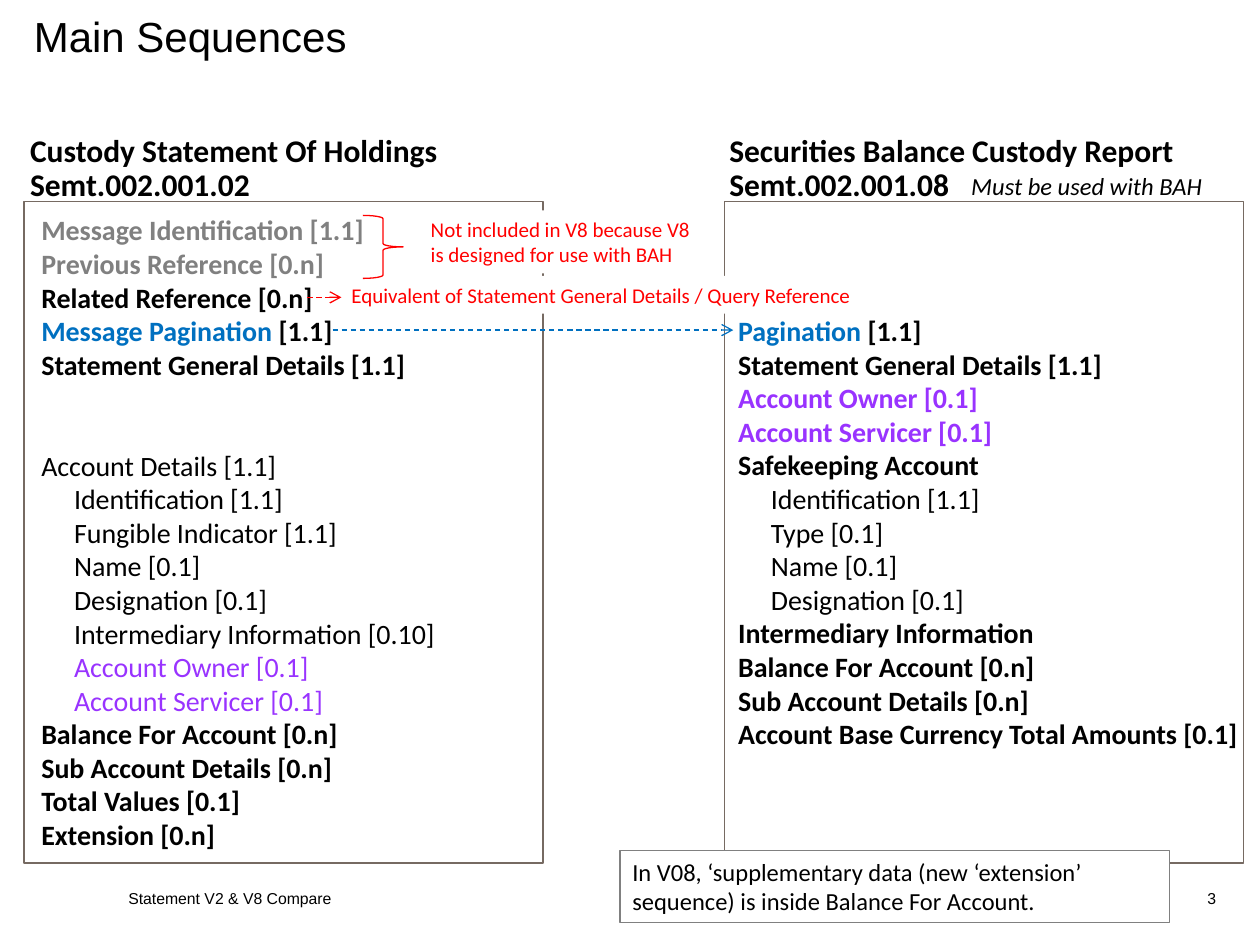
from dataclasses import dataclass

from pptx import Presentation
from pptx.dml.color import RGBColor
from pptx.enum.dml import MSO_LINE
from pptx.enum.shapes import MSO_CONNECTOR, MSO_SHAPE
from pptx.enum.text import MSO_ANCHOR, MSO_AUTO_SIZE, PP_ALIGN
from pptx.oxml.ns import qn
from pptx.util import Inches, Pt
from lxml import etree

RECT, BRACE = MSO_SHAPE.RECTANGLE, MSO_SHAPE.RIGHT_BRACE
STRAIGHT, DASH = MSO_CONNECTOR.STRAIGHT, MSO_LINE.DASH
TOP, MIDDLE = MSO_ANCHOR.TOP, MSO_ANCHOR.MIDDLE
LEFT, RIGHT = PP_ALIGN.LEFT, PP_ALIGN.RIGHT
FIT, FIXED = MSO_AUTO_SIZE.SHAPE_TO_FIT_TEXT, MSO_AUTO_SIZE.NONE


@dataclass(frozen=True)
class Theme:
    black: str = "000000"
    white: str = "FFFFFF"
    gray: str = "808080"
    frame: str = "766A62"
    blue: str = "0070C0"
    purple: str = "9933FF"
    red: str = "FF0000"
    head_font: str = "Arial"
    body_font: str = "Calibri"
    title: int = 24
    heading: int = 18
    item: int = 16
    remark: int = 14
    note: int = 12
    footer: int = 9
    line: float = 0.75


T = Theme()
prs = Presentation()
prs.slide_width, prs.slide_height = Inches(10), Inches(7.5)
COL, ROW = prs.slide_width / 100, prs.slide_height / 75
s = prs.slides.add_slide(prs.slide_layouts[6])


def grid(*cells):
    return [round(c * (ROW if i % 2 else COL)) for i, c in enumerate(cells)]


def write(sp, lines, size, font=T.body_font, color=T.black, bold=False, italic=False,
          align=LEFT, anchor=TOP, wrap=True, fit=FIT, spacing=None):
    tf = sp.text_frame
    tf.word_wrap, tf.auto_size, tf.vertical_anchor = wrap, fit, anchor
    for i, line in enumerate(lines):
        p = tf.paragraphs[0] if i == 0 else tf.add_paragraph()
        line = {"runs": [(line, color)]} if isinstance(line, str) else line
        p.alignment = align
        if spacing:
            p.line_spacing = Pt(spacing)
        if "before" in line:
            p.space_before = Pt(line["before"])
        if line.get("indent"):
            p._p.get_or_add_pPr().set("marL", str(round(INDENT * COL)))
        for text, tint in line["runs"]:
            r = p.add_run()
            r.text = text
            f = r.font
            f.name, f.size, f.italic = font, Pt(size), italic
            f.bold = line.get("bold", bold)
            f.color.rgb = RGBColor.from_string(tint)


INDENT = 2.6
GAP = 38.5
LEFT_X, RIGHT_X = 1.9, 57.5
FRAME_TOP, FRAME_W, FRAME_H = 16, 41.2, 52.5

custody_items = [
    {"runs": [("Message Identification [1.1]", T.gray)]},
    {"runs": [("Previous Reference [0.n]", T.gray)]},
    "Related Reference [0.n]",
    {"runs": [("Message Pagination ", T.blue), ("[1.1]", T.black)]},
    "Statement General Details [1.1]",
    {"runs": [("Account Details [1.1]", T.black)], "bold": False, "before": GAP},
    *[{"runs": [(text, T.black)], "bold": False, "indent": True} for text in (
        "Identification [1.1]", "Fungible Indicator [1.1]", "Name [0.1]",
        "Designation [0.1]", "Intermediary Information [0.10]")],
    *[{"runs": [(text, T.purple)], "bold": False, "indent": True} for text in (
        "Account Owner [0.1]", "Account Servicer [0.1]")],
    "Balance For Account [0.n]",
    "Sub Account Details [0.n]",
    "Total Values [0.1]",
    "Extension [0.n]",
]
balance_items = [
    {"runs": [("Pagination ", T.blue), ("[1.1]", T.black)]},
    "Statement General Details [1.1]",
    {"runs": [("Account Owner [0.1]", T.purple)]},
    {"runs": [("Account Servicer [0.1]", T.purple)]},
    "Safekeeping Account",
    *[{"runs": [(text, T.black)], "bold": False, "indent": True} for text in (
        "Identification [1.1]", "Type [0.1]", "Name [0.1]", "Designation [0.1]")],
    "Intermediary Information",
    "Balance For Account [0.n]",
    "Sub Account Details [0.n]",
    "Account Base Currency Total Amounts [0.1]",
]

head = dict(font=T.head_font, anchor=MIDDLE, fit=FIXED)
label = dict(size=T.heading, bold=True, wrap=False, spacing=19)
items = dict(size=T.item, bold=True, wrap=False)
for box, lines, fmt in [
    ((1.7, 0, 97.3, 5.6), ["Main Sequences"], dict(head, size=T.title)),
    ((9.2, 70, 62.1, 2.5), ["Statement V2 & V8 Compare"], dict(head, size=T.footer)),
    ((89.2, 70, 8.3, 2.5), ["3"], dict(head, size=T.footer, align=RIGHT)),
    ((1.4, 10.3, 34.6, 6.3), ["Custody Statement Of Holdings", "Semt.002.001.02"], label),
    ((2.3, 16.4, 33.6, 52.2), custody_items, items),
    ((57.6, 24.4, 42.2, 36), balance_items, items),
    ((56.9, 10.3, 37.6, 6.3), ["Securities Balance Custody Report", "Semt.002.001.08"], label),
    ((76.1, 13.1, 20.7, 3.4), ["Must be used with BAH"],
     dict(size=T.remark, italic=True, wrap=False)),
]:
    write(s.shapes.add_textbox(*grid(*box)), lines, **fmt)

note = dict(size=T.note, color=T.red)
for kind, box, fill, line, lines, fmt in [
    (RECT, (RIGHT_X, FRAME_TOP, FRAME_W, FRAME_H), None, T.frame, [], {}),
    (RECT, (LEFT_X, FRAME_TOP, FRAME_W, FRAME_H), None, T.frame, [], {}),
    (RECT, (26.9, 21.9, 51.9, 3), T.white, None,
     ["Equivalent of Statement General Details / Query Reference"], note),
    (RECT, (33.2, 16.7, 22.9, 5), T.white, None,
     ["Not included in V8 because V8 is designed for use with BAH"], note),
    (BRACE, (28.8, 17.1, 3.2, 5), None, T.red, [], {}),
    (RECT, (49.2, 67.5, 43.6, 5.7), T.white, T.gray,
     ["In V08, ‘supplementary data (new ‘extension’ sequence) is inside Balance For Account."],
     dict(size=T.remark)),
]:
    sp = s.shapes.add_shape(kind, *grid(*box))
    sp.shadow.inherit = False
    if fill:
        sp.fill.solid()
        sp.fill.fore_color.rgb = RGBColor.from_string(fill)
    else:
        sp.fill.background()
    if line:
        sp.line.color.rgb = RGBColor.from_string(line)
        sp.line.width = Pt(T.line)
    else:
        sp.line.fill.background()
    if lines:
        write(sp, lines, **fmt)

for x1, x2, y, color in [(24.4, 27.1, 23.6, T.red), (26.4, 58.2, 26.2, T.blue)]:
    cx = s.shapes.add_connector(STRAIGHT, *grid(x1, y, x2, y))
    cx.line.color.rgb = RGBColor.from_string(color)
    cx.line.width = Pt(T.line)
    cx.line.dash_style = DASH
    etree.SubElement(cx.line._get_or_add_ln(), qn("a:tailEnd"), type="arrow")
    etree.SubElement(cx._element.spPr, qn("a:effectLst"))

prs.save("out.pptx")
